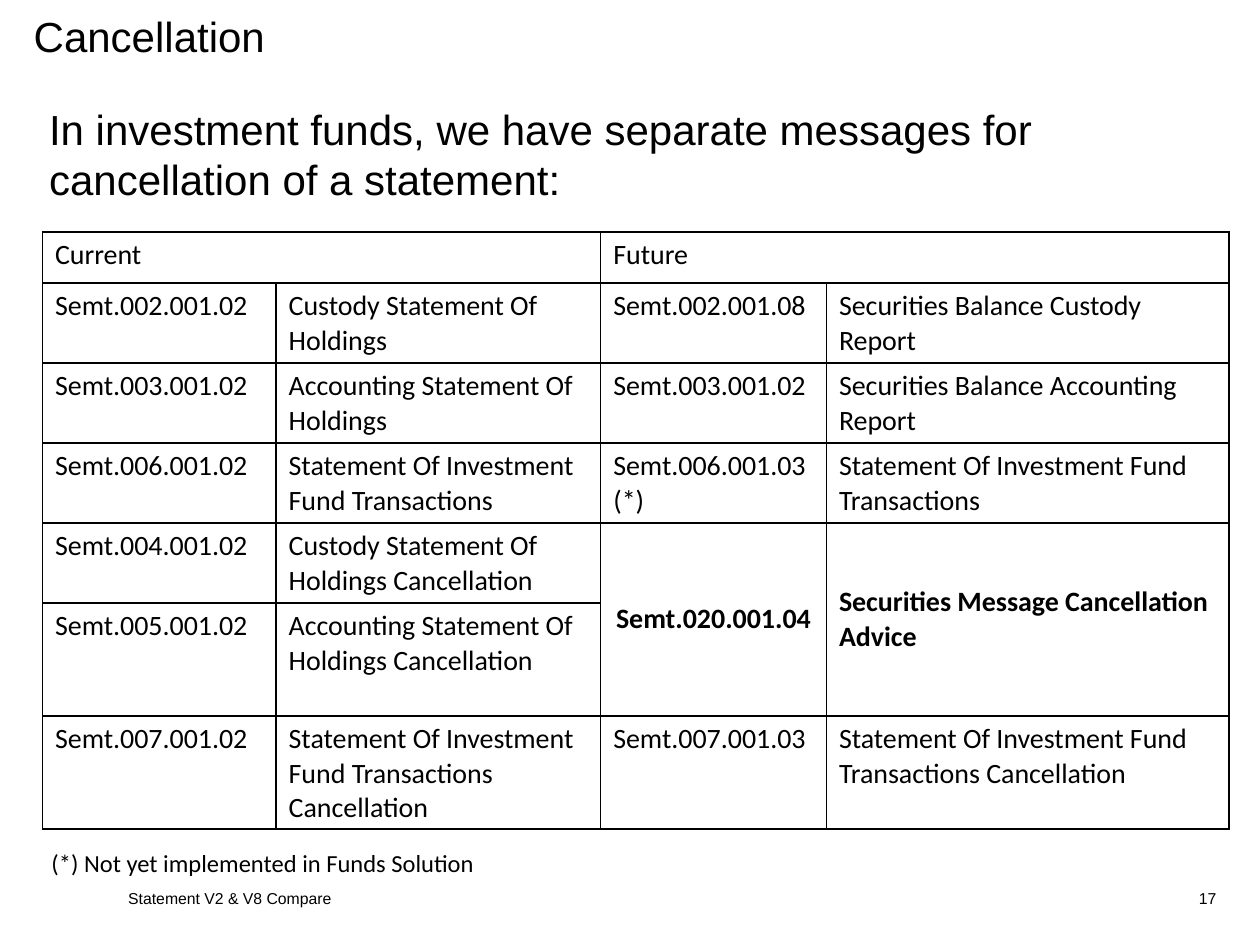
from pptx import Presentation
from pptx import util as u
from pptx.dml import color
from pptx.enum import text
from pptx.oxml import ns, parse_xml

COLOURS = {"ink": "000000"}
FONTS = {"heading": "Arial", "table": "Calibri"}
COLUMNS = [133.5, 185.5, 129, 230]
ROWS = [29.2, 45.7, 45.7, 45.7, 45.7, 64.6, 64.6]
MESSAGES = [
    ["Current", "", "Future", ""],
    ["Semt.002.001.02", "Custody Statement Of Holdings",
     "Semt.002.001.08", "Securities Balance Custody Report"],
    ["Semt.003.001.02", "Accounting Statement Of Holdings",
     "Semt.003.001.02", "Securities Balance Accounting Report"],
    ["Semt.006.001.02", "Statement Of Investment Fund Transactions",
     "Semt.006.001.03 (*)", "Statement Of Investment Fund Transactions"],
    ["Semt.004.001.02", "Custody Statement Of Holdings Cancellation",
     "Semt.020.001.04", "Securities Message Cancellation Advice"],
    ["Semt.005.001.02", "Accounting Statement Of Holdings Cancellation", "", ""],
    ["Semt.007.001.02", "Statement Of Investment Fund Transactions Cancellation",
     "Semt.007.001.03", "Statement Of Investment Fund Transactions Cancellation"],
]
MERGES = [(0, 0, 0, 1), (0, 2, 0, 3), (4, 2, 5, 2), (4, 3, 5, 3)]
SHARED_ROW = 4
LEFT, CENTRE, RIGHT = (text.PP_ALIGN.LEFT, text.PP_ALIGN.CENTER, text.PP_ALIGN.RIGHT)
TOP, MIDDLE = text.MSO_ANCHOR.TOP, text.MSO_ANCHOR.MIDDLE


class Page:
    """Draws styled text and tables on one slide."""

    def __init__(self, deck):
        self.slide = deck.slides.add_slide(deck.slide_layouts[6])
        self.ink = color.RGBColor.from_string(COLOURS["ink"])

    def fill_text(self, frame, words, font, size, bold=False, align=LEFT):
        para = frame.paragraphs[0]
        para.alignment = align
        span = para.add_run()
        span.text = words
        formats = {"name": font, "size": u.Pt(size), "bold": bold}
        for name, value in formats.items():
            setattr(span.font, name, value)
        span.font.color.rgb = self.ink

    def label(self, place, words, font, size, align=LEFT, anchor=MIDDLE, wrap=True):
        box = self.slide.shapes.add_textbox(*map(u.Pt, place))
        formats = {"word_wrap": wrap, "vertical_anchor": anchor}
        for name, value in formats.items():
            setattr(box.text_frame, name, value)
        self.fill_text(box.text_frame, words, font, size, align=align)

    def border(self, cell):
        properties = cell._tc.get_or_add_tcPr()
        for index, side in enumerate(("lnL", "lnR", "lnT", "lnB")):
            properties.insert(index, parse_xml(
                f'<a:{side} {ns.nsdecls("a")} w="{u.Pt(1)}"><a:solidFill>'
                f'<a:srgbClr val="{COLOURS["ink"]}"/></a:solidFill></a:{side}>'))

    def table(self, left, top, rows):
        size = map(u.Pt, (left, top, sum(COLUMNS), sum(ROWS)))
        grid = self.slide.shapes.add_table(len(ROWS), len(COLUMNS), *size).table
        for column, width in zip(grid.columns, COLUMNS):
            column.width = u.Pt(width)
        for row, height in zip(grid.rows, ROWS):
            row.height = u.Pt(height)
        for r1, c1, r2, c2 in MERGES:
            grid.cell(r1, c1).merge(grid.cell(r2, c2))
        for r, row in enumerate(rows):
            for c, words in enumerate(row):
                cell = grid.cell(r, c)
                cell.fill.background()
                self.border(cell)
                if not words:
                    continue
                shared = r == SHARED_ROW and c >= 2
                cell.vertical_anchor = MIDDLE if shared else TOP
                self.fill_text(cell.text_frame, words, FONTS["table"], 16, shared,
                               CENTRE if shared and c == 2 else LEFT)


def main():
    deck = Presentation()
    deck.slide_width, deck.slide_height = u.Pt(720), u.Pt(540)
    page = Page(deck)
    heading = FONTS["heading"]
    page.label((12.2, 0, 700, 40.3), "Cancellation", heading, 24)
    page.label((66.2, 504, 447, 18), "Statement V2 & V8 Compare", heading, 9)
    page.label((642.2, 504, 60, 18), "17", heading, 9, align=RIGHT)
    page.label((21, 55, 697.5, 65.5), "In investment funds, we have separate messages "
               "for cancellation of a statement:", heading, 24)
    page.table(24.3, 132.5, MESSAGES)
    page.label((22.3, 481, 258.5, 24.5), "(*) Not yet implemented in Funds Solution",
               FONTS["table"], 14, anchor=TOP, wrap=False)
    deck.save("out.pptx")


if __name__ == "__main__":
    main()
